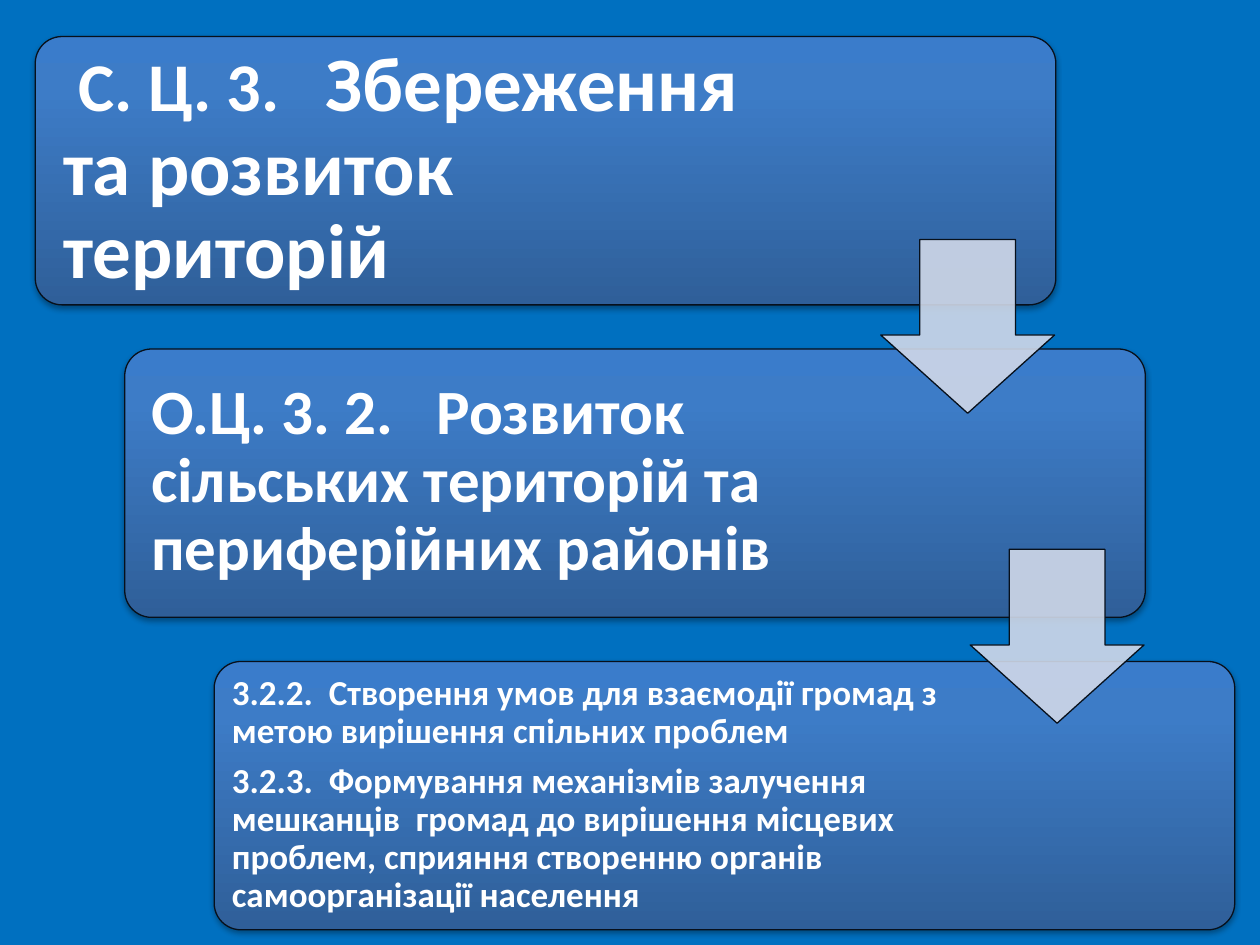
from dataclasses import dataclass

from lxml import etree
from pptx import Presentation
from pptx.dml.color import RGBColor
from pptx.enum.shapes import MSO_SHAPE
from pptx.enum.text import MSO_ANCHOR, MSO_AUTO_SIZE, PP_ALIGN
from pptx.oxml.ns import qn
from pptx.util import Inches, Pt

CARD = MSO_SHAPE.ROUNDED_RECTANGLE
ARROW = MSO_SHAPE.DOWN_ARROW
MIDDLE = MSO_ANCHOR.MIDDLE
NO_AUTOFIT = MSO_AUTO_SIZE.NONE
LEFT = PP_ALIGN.LEFT


@dataclass(frozen=True)
class Theme:
    font: str = "Calibri"
    background: str = "0070C0"
    text: str = "FFFFFF"
    outline: str = "07101B"
    arrow: str = "D0D8E8"
    arrow_opacity: int = 90
    gradient: tuple = ((0, "2F5F99"), (80, "3D7CC7"), (100, "3A7CCB"))
    shadow: str = "000000"
    shadow_opacity: int = 35
    outline_width: float = 0.75
    label_size: int = 39
    strategic_size: int = 44
    operational_size: int = 36
    task_size: int = 20


def add_xml(parent, tag, **attributes):
    element = etree.SubElement(parent, qn(tag))
    for name, value in attributes.items():
        element.set(name, str(value))
    return element


class GoalSlide:
    def __init__(self, slide, theme):
        self.slide = slide
        self.theme = theme
        background = slide.background.fill
        background.solid()
        background.fore_color.rgb = RGBColor.from_string(theme.background)

    def outlined(self, preset, left, top, width, height, adjustments):
        shape = self.slide.shapes.add_shape(
            preset, Inches(left), Inches(top), Inches(width), Inches(height))
        for index, value in enumerate(adjustments):
            shape.adjustments[index] = value
        shape.shadow.inherit = False
        shape.line.color.rgb = RGBColor.from_string(self.theme.outline)
        shape.line.width = Pt(self.theme.outline_width)
        return shape

    def card(self, left, top, width, height):
        card = self.outlined(CARD, left, top, width, height, [0.1])
        card.fill.gradient()
        properties = card._element.spPr
        gradient = properties.find(qn("a:gradFill"))
        for child in list(gradient):
            gradient.remove(child)
        stops = add_xml(gradient, "a:gsLst")
        for position, color in self.theme.gradient:
            stop = add_xml(stops, "a:gs", pos=position * 1000)
            add_xml(stop, "a:srgbClr", val=color)
        add_xml(gradient, "a:lin", ang=270 * 60000, scaled=0)
        shadow = add_xml(properties.find(qn("a:effectLst")), "a:outerShdw",
                         blurRad=Pt(3.1), dist=Pt(1.8), dir=90 * 60000, rotWithShape=0)
        color = add_xml(shadow, "a:srgbClr", val=self.theme.shadow)
        add_xml(color, "a:alpha", val=self.theme.shadow_opacity * 1000)

    def arrow(self, left, top, size):
        arrow = self.outlined(ARROW, left, top, size, size, [0.55, 0.45])
        arrow.fill.solid()
        arrow.fill.fore_color.rgb = RGBColor.from_string(self.theme.arrow)
        color = arrow._element.spPr.find(qn("a:solidFill"))[0]
        add_xml(color, "a:alpha", val=self.theme.arrow_opacity * 1000)

    def text_box(self):
        return self.slide.shapes.add_textbox(0, 0, 0, 0)

    def placeholder(self, index):
        holder = self.slide.placeholders[index]
        self.slide.shapes._spTree.append(holder._element)
        return holder

    def text(self, holder, left, top, width, height, inset, size, paragraphs):
        holder.left, holder.top = Inches(left), Inches(top)
        holder.width, holder.height = Inches(width), Inches(height)
        frame = holder.text_frame
        frame.word_wrap = True
        frame.auto_size = NO_AUTOFIT
        frame.vertical_anchor = MIDDLE
        frame.margin_left = frame.margin_right = Inches(inset)
        frame.margin_top = frame.margin_bottom = Inches(inset)
        for index, runs in enumerate(paragraphs):
            paragraph = frame.add_paragraph() if index else frame.paragraphs[0]
            paragraph.alignment = LEFT
            paragraph.line_spacing = 0.9
            paragraph.space_before = Pt(0)
            paragraph.space_after = Pt(round(size * 0.35))
            paragraph.font.name = self.theme.font
            paragraph.font.size = Pt(size)
            paragraph.font.bold = True
            paragraph.font.color.rgb = RGBColor.from_string(self.theme.text)
            properties = paragraph._p.get_or_add_pPr()
            properties.set("marL", "0")
            properties.set("indent", "0")
            properties.insert_element_before(
                etree.Element(qn("a:buNone")), "a:tabLst", "a:defRPr", "a:extLst")
            for wording, run_size in runs:
                run = paragraph.add_run()
                run.text = wording
                if run_size != size:
                    run.font.size = Pt(run_size)


def main():
    presentation = Presentation()
    presentation.slide_width = Inches(10)
    presentation.slide_height = Inches(7.5)
    theme = Theme()
    goals = GoalSlide(
        presentation.slides.add_slide(presentation.slide_layouts[1]), theme)

    card_left, card_top, card_width, card_height = 0.28, 0.29, 8.1, 2.13
    step_x, step_y = 0.71, 2.48
    text_offset, text_height = 0.06, 2
    strategic = [[(" С. Ц. 3.   ", theme.label_size),
                  ("Збереження та розвиток територій", theme.strategic_size)]]
    operational = [[("О.Ц. 3. 2.   Розвиток сільських територій та периферійних районів",
                     theme.operational_size)]]
    tasks = [[(task, theme.task_size)] for task in (
        "3.2.2.  Створення умов для взаємодії громад з метою вирішення спільних проблем",
        "3.2.3.  Формування механізмів залучення мешканців  громад до вирішення місцевих "
        "проблем, сприяння створенню органів самоорганізації населення")]
    levels = [
        (goals.placeholder(0), 5.8, 0.16, theme.strategic_size, strategic),
        (goals.text_box(), 5.88, 0.15, theme.operational_size, operational),
        (goals.placeholder(1), 5.88, 0.08, theme.task_size, tasks),
    ]
    for level, (holder, width, inset, size, paragraphs) in enumerate(levels):
        left, top = card_left + level * step_x, card_top + level * step_y
        goals.card(left, top, card_width, card_height)
        goals.slide.shapes._spTree.append(holder._element)
        goals.text(holder, left + text_offset, top + text_offset,
                   width, text_height, inset, size, paragraphs)

    arrow_left, arrow_top, arrow_size = 6.99, 1.9, 1.38
    for level in range(len(levels) - 1):
        goals.arrow(arrow_left + level * step_x, arrow_top + level * 2.46, arrow_size)

    presentation.save("out.pptx")


if __name__ == "__main__":
    main()
